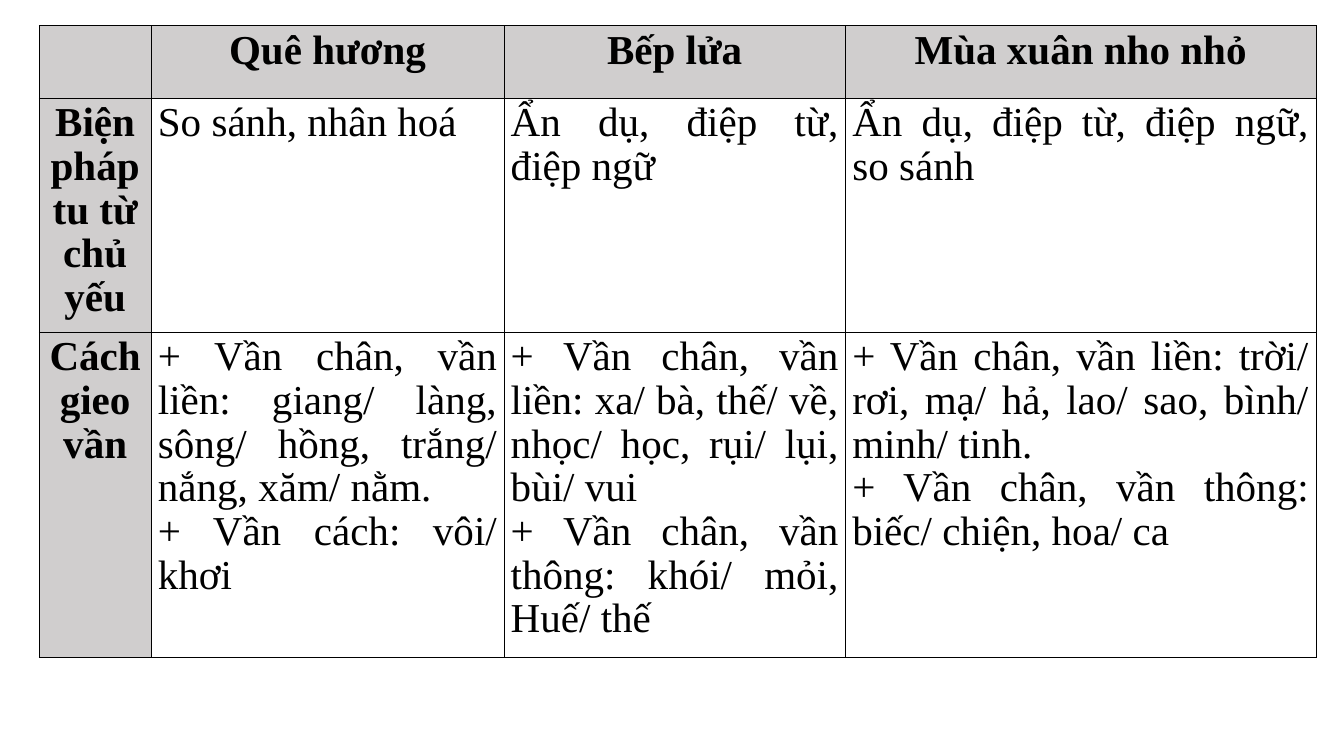
"""Build a slide with a table comparing the devices and rhymes of three poems."""
from dataclasses import dataclass

from lxml.etree import SubElement
from pptx import Presentation
from pptx.dml.color import RGBColor
from pptx.enum.text import PP_ALIGN
from pptx.oxml.ns import qn
from pptx.table import _Cell
from pptx.util import Inches, Pt


@dataclass(frozen=True)
class Theme:
    font: str = "Times New Roman"
    size: float = 44
    line_spacing: float = 0.96
    text: str = "000000"
    heading_fill: str = "D0CECE"
    body_fill: str = "FFFFFF"
    border: str = "000000"
    border_width: float = 1


@dataclass(frozen=True)
class Grid:
    columns: int = 240
    rows: int = 135
    unit: int = Inches(20) // 240

    def span(self, count: float) -> int:
        return round(count * self.unit)


@dataclass(frozen=True)
class Row:
    height: float
    heading: str
    cells: tuple[tuple[str, ...], ...]


THEME = Theme()
GRID = Grid()
LEFT, TOP = 7, 4.6
COLUMN_WIDTHS = (20, 63, 61, 84)
ROWS = (
    Row(13, "", (("Quê hương",), ("Bếp lửa",), ("Mùa xuân nho nhỏ",))),
    Row(41.8, "Biện pháp tu từ chủ yếu", (
        ("So sánh, nhân hoá",),
        ("Ẩn dụ, điệp từ, điệp ngữ",),
        ("Ẩn dụ, điệp từ, điệp ngữ, so sánh",),
    )),
    Row(58, "Cách gieo vần", (
        ("+ Vần chân, vần liền: giang/ làng, sông/ hồng, trắng/ nắng, xăm/ nằm.",
         "+ Vần cách: vôi/ khơi"),
        ("+ Vần chân, vần liền: xa/ bà, thế/ về, nhọc/ học, rụi/ lụi, bùi/ vui",
         "+ Vần chân, vần thông: khói/ mỏi, Huế/ thế"),
        ("+ Vần chân, vần liền: trời/ rơi, mạ/ hả, lao/ sao, bình/ minh/ tinh.",
         "+ Vần chân, vần thông: biếc/ chiện, hoa/ ca"),
    )),
)


def add_borders(cell: _Cell) -> None:
    tc_pr = cell._tc.get_or_add_tcPr()
    for index, side in enumerate(("a:lnL", "a:lnR", "a:lnT", "a:lnB")):
        line = tc_pr.makeelement(qn(side), {"w": str(Pt(THEME.border_width))})
        fill = SubElement(line, qn("a:solidFill"))
        SubElement(fill, qn("a:srgbClr"), val=THEME.border)
        tc_pr.insert(index, line)


def fill_cell(cell: _Cell, paragraphs: tuple[str, ...], is_heading: bool) -> None:
    cell.fill.solid()
    fill = THEME.heading_fill if is_heading else THEME.body_fill
    cell.fill.fore_color.rgb = RGBColor.from_string(fill)
    add_borders(cell)
    tf = cell.text_frame
    for index, text in enumerate(paragraphs):
        p = tf.add_paragraph() if index else tf.paragraphs[0]
        p.alignment = PP_ALIGN.CENTER if is_heading else PP_ALIGN.JUSTIFY
        p.line_spacing = THEME.line_spacing
        if text:
            r = p.add_run()
            r.text = text
            r.font.name = THEME.font
            r.font.size = Pt(THEME.size)
            r.font.bold = is_heading
            r.font.color.rgb = RGBColor.from_string(THEME.text)


def main() -> None:
    prs = Presentation()
    prs.slide_width = GRID.span(GRID.columns)
    prs.slide_height = GRID.span(GRID.rows)
    s = prs.slides.add_slide(prs.slide_layouts[6])
    table = s.shapes.add_table(
        len(ROWS), len(COLUMN_WIDTHS), GRID.span(LEFT), GRID.span(TOP),
        GRID.span(sum(COLUMN_WIDTHS)), GRID.span(sum(row.height for row in ROWS)),
    ).table
    for column, width in zip(table.columns, COLUMN_WIDTHS):
        column.width = GRID.span(width)
    for i, row in enumerate(ROWS):
        table.rows[i].height = GRID.span(row.height)
        for j, paragraphs in enumerate(((row.heading,), *row.cells)):
            fill_cell(table.cell(i, j), paragraphs, i == 0 or j == 0)
    prs.save("out.pptx")


if __name__ == "__main__":
    main()
